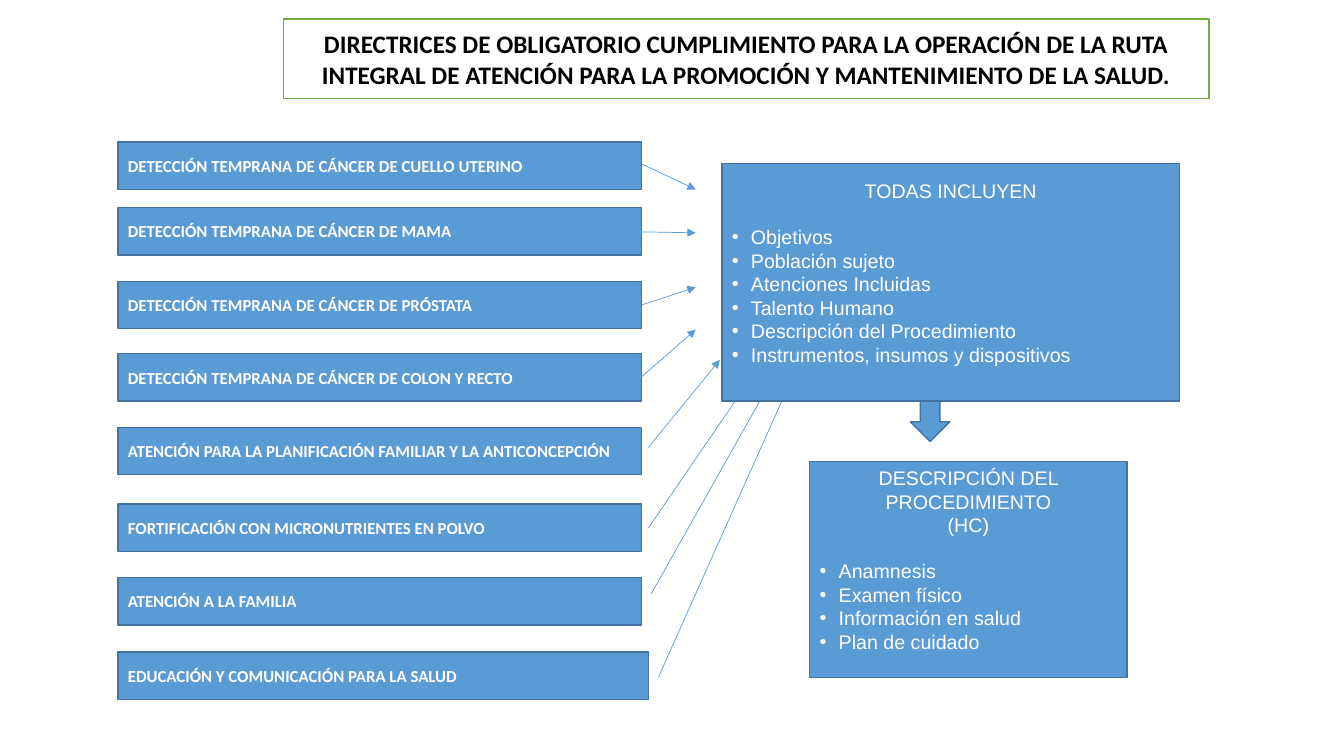
import pptx
import pptx.util
import pptx.dml.color
import pptx.enum.shapes
import pptx.enum.text
import pptx.oxml.ns
import lxml.etree

Inches = pptx.util.Inches
Pt = pptx.util.Pt
RGBColor = pptx.dml.color.RGBColor
ALIGN = pptx.enum.text.PP_ALIGN
SHAPE = pptx.enum.shapes.MSO_SHAPE

BLUE = RGBColor(0x5B, 0x9B, 0xD5)
DARK_BLUE = RGBColor(0x43, 0x73, 0x9E)
GREEN = RGBColor(0x70, 0xAD, 0x47)
WHITE = RGBColor(0xFF, 0xFF, 0xFF)
BLACK = RGBColor(0, 0, 0)


def add_text(shape, text, size=14, font="Arial", color=WHITE, bold=False,
             align=ALIGN.CENTER, bullet=False, before=0):
    """Fill the first paragraph of the shape, or append another one."""
    frame = shape.text_frame
    frame.word_wrap = True
    frame.auto_size = pptx.enum.text.MSO_AUTO_SIZE.NONE
    frame.vertical_anchor = pptx.enum.text.MSO_ANCHOR.MIDDLE
    paragraph = frame.add_paragraph() if frame.text else frame.paragraphs[0]
    paragraph.text = text
    paragraph.alignment = align
    if before:
        paragraph.space_before = Pt(before)
    if bullet:
        properties = paragraph._p.get_or_add_pPr()
        properties.set("marL", str(Inches(0.19)))
        properties.set("indent", str(-Inches(0.19)))
        for tag, name, value in (("a:buFont", "typeface", "Arial"),
                                 ("a:buChar", "char", "•")):
            lxml.etree.SubElement(properties, pptx.oxml.ns.qn(tag)).set(name, value)
    paragraph.font.size = Pt(size)
    paragraph.font.name = font
    paragraph.font.bold = bold
    paragraph.font.color.rgb = color


def add_blue_shape(kind, left, top, width, height):
    shape = slide.shapes.add_shape(
        kind, Inches(left), Inches(top), Inches(width), Inches(height))
    shape.shadow.inherit = False
    shape.fill.solid()
    shape.fill.fore_color.rgb = BLUE
    shape.line.color.rgb = DARK_BLUE
    shape.line.width = Pt(1)
    return shape


presentation = pptx.Presentation()
presentation.slide_width = Inches(13.33)
presentation.slide_height = Inches(7.5)
slide = presentation.slides.add_slide(presentation.slide_layouts[5])

# Title
title = slide.shapes.title
title.left, title.top = Inches(2.81), Inches(0.19)
title.width, title.height = Inches(9.18), Inches(0.79)
title.fill.solid()
title.fill.fore_color.rgb = WHITE
title.line.color.rgb = GREEN
title.line.width = Pt(1)
add_text(title, "DIRECTRICES DE OBLIGATORIO CUMPLIMIENTO PARA LA OPERACIÓN DE LA RUTA "
         "INTEGRAL DE ATENCIÓN PARA LA PROMOCIÓN Y MANTENIMIENTO DE LA SALUD.",
         size=18, font="Calibri", color=BLACK, bold=True)

# Guidelines: top, width, text, arrow start and arrow end
guidelines = [
    (1.41, 5.19, "DETECCIÓN TEMPRANA DE CÁNCER DE CUELLO UTERINO", (6.35, 1.62), (6.9, 1.88)),
    (2.06, 5.19, "DETECCIÓN TEMPRANA DE CÁNCER DE MAMA", (6.35, 2.3), (6.9, 2.31)),
    (2.79, 5.19, "DETECCIÓN TEMPRANA DE CÁNCER DE PRÓSTATA", (6.35, 3.03), (6.9, 2.85)),
    (3.51, 5.19, "DETECCIÓN TEMPRANA DE CÁNCER DE COLON Y RECTO", (6.35, 3.75), (6.9, 3.27)),
    (4.24, 5.19, "ATENCIÓN PARA LA PLANIFICACIÓN FAMILIAR Y LA ANTICONCEPCIÓN",
     (6.43, 4.44), (7.14, 3.57)),
    (5.0, 5.19, "FORTIFICACIÓN CON MICRONUTRIENTES EN POLVO", (6.43, 5.24), (7.53, 3.63)),
    (5.73, 5.19, "ATENCIÓN A LA FAMILIA", (6.46, 5.89), (7.71, 3.67)),
    (6.47, 5.26, "EDUCACIÓN Y COMUNICACIÓN PARA LA SALUD", (6.53, 6.72), (7.91, 3.63)),
]
for top, width, text, start, end in guidelines:
    box = add_blue_shape(SHAPE.RECTANGLE, 1.17, top, width, 0.47)
    add_text(box, text, size=12, font="Calibri", bold=True, align=ALIGN.JUSTIFY)
    arrow = slide.shapes.add_connector(
        pptx.enum.shapes.MSO_CONNECTOR.STRAIGHT,
        *[Inches(value) for value in start + end])
    arrow.line.color.rgb = BLUE
    arrow.line.width = Pt(0.5)
    head = lxml.etree.SubElement(arrow.line._get_or_add_ln(), pptx.oxml.ns.qn("a:tailEnd"))
    head.set("type", "triangle")
    lxml.etree.SubElement(arrow._element.spPr, pptx.oxml.ns.qn("a:effectLst"))

# Panels, in front of the arrows that run under them
panels = [
    ((7.16, 1.62, 4.54, 2.36), ["TODAS INCLUYEN"],
     ["Objetivos", "Población sujeto", "Atenciones Incluidas", "Talento Humano",
      "Descripción del Procedimiento", "Instrumentos, insumos y dispositivos"]),
    ((8.03, 4.58, 3.15, 2.14), ["DESCRIPCIÓN DEL PROCEDIMIENTO", "(HC)"],
     ["Anamnesis", "Examen físico", "Información en salud", "Plan de cuidado"]),
]
for place, headings, items in panels:
    panel = add_blue_shape(SHAPE.RECTANGLE, *place)
    panel.text_frame.margin_bottom = Inches(0.24)
    for heading in headings:
        add_text(panel, heading)
    for index, item in enumerate(items):
        add_text(panel, item, align=ALIGN.JUSTIFY, bullet=True,
                 before=16 if index == 0 else 0)

# Arrow between the panels
add_blue_shape(SHAPE.DOWN_ARROW, 9.03, 3.98, 0.39, 0.4)

presentation.save("out.pptx")
